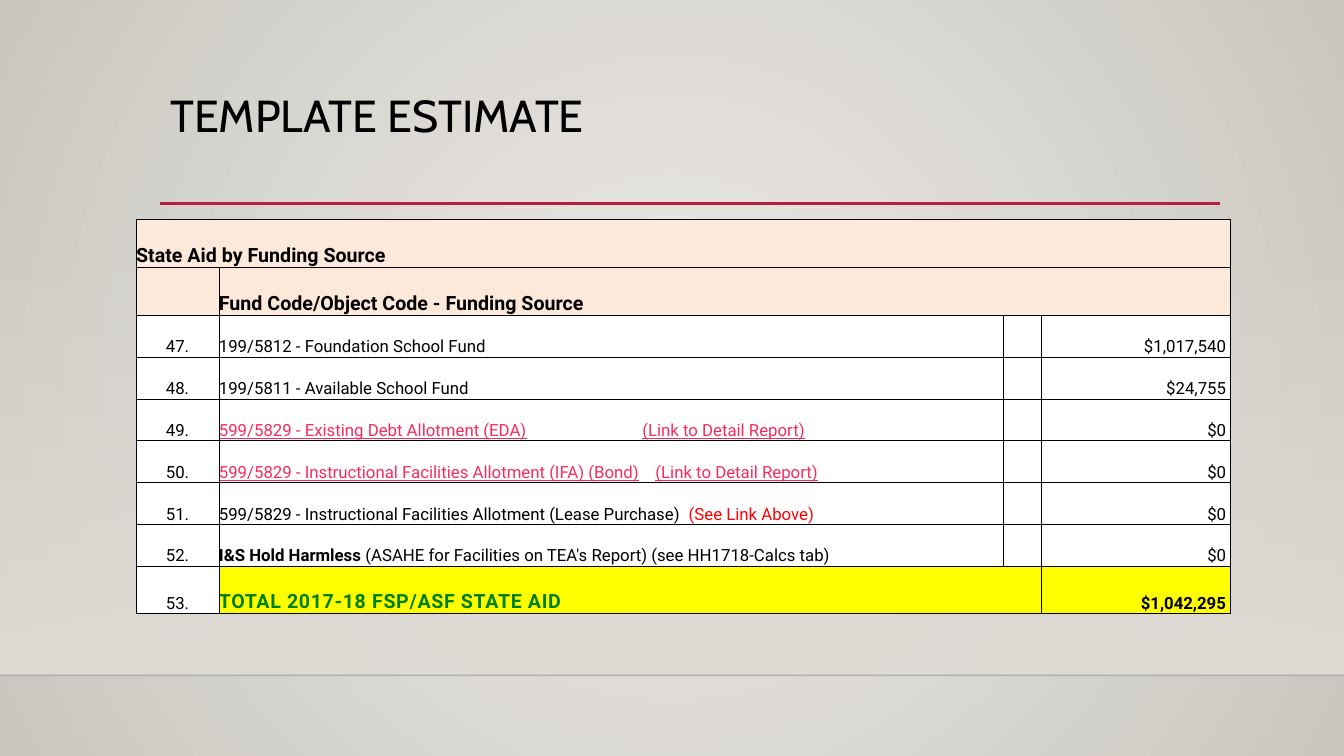
"""Build the template estimate slide with its state aid table."""
from dataclasses import dataclass

from lxml import etree
from pptx import Presentation
from pptx.dml.color import RGBColor
from pptx.enum.shapes import MSO_CONNECTOR, MSO_SHAPE
from pptx.enum.text import MSO_ANCHOR, PP_ALIGN
from pptx.oxml.ns import qn
from pptx.util import Inches, Length, Pt

STRAIGHT = MSO_CONNECTOR.STRAIGHT
RECTANGLE = MSO_SHAPE.RECTANGLE
TOP, BOTTOM = MSO_ANCHOR.TOP, MSO_ANCHOR.BOTTOM
LEFT, CENTER, RIGHT = PP_ALIGN.LEFT, PP_ALIGN.CENTER, PP_ALIGN.RIGHT

BLACK = RGBColor(0x00, 0x00, 0x00)
WHITE = RGBColor(0xFF, 0xFF, 0xFF)
GLOW = RGBColor(0xEC, 0xEA, 0xE7)
STONE = RGBColor(0xCA, 0xC7, 0xC1)
WALL = RGBColor(0xDF, 0xDB, 0xD5)
CRIMSON = RGBColor(0xB7, 0x1E, 0x42)
PEACH = RGBColor(0xFD, 0xE9, 0xD9)
YELLOW = RGBColor(0xFF, 0xFF, 0x00)
PINK = RGBColor(0xFA, 0x2B, 0x5C)
RED = RGBColor(0xFF, 0x00, 0x00)
GREEN = RGBColor(0x00, 0x80, 0x00)

SLIDE_WIDTH, SLIDE_HEIGHT = Inches(13.33), Inches(7.5)
MARGIN, RULE_END = 11.93, 90.77
FLOOR = 89.33
COLUMN_SHARES = (0.82, 7.77, 0.38, 1.87)
TALL, SHORT = 8, 7
AMOUNT_INSET = Inches(0.04)
RADIAL = '<a:path path="circle"><a:fillToRect l="50000" t="50000" r="50000" b="50000"/></a:path>'
DOWNWARD = '<a:lin ang="5400000" scaled="0"/>'
DRAWING = 'xmlns:a="http://schemas.openxmlformats.org/drawingml/2006/main"'


@dataclass(frozen=True)
class Phrase:
    """A stretch of text in one format."""
    text: str
    color: RGBColor = BLACK
    size: float = 12
    bold: bool = False
    underline: bool = False
    font: str = "Roboto"
    tracking: int = 0


@dataclass(frozen=True)
class FundRow:
    """A table row, with the column edges that carry no border."""
    number: tuple[Phrase, ...] = ()
    source: tuple[Phrase, ...] = ()
    amount: tuple[Phrase, ...] = ()
    fill: RGBColor = WHITE
    number_fill: RGBColor = WHITE
    height: int = SHORT
    open_edges: frozenset[int] = frozenset()
    tab: float = 0


def fund(number: int, *source: Phrase, amount: str = "$0", tab: float = 0) -> FundRow:
    """Describe one numbered funding source."""
    return FundRow((Phrase(f"{number}."),), source, (Phrase(amount),), tab=tab)


def link(text: str) -> Phrase:
    """Describe underlined link text."""
    return Phrase(text, PINK, underline=True)


ROWS = (
    FundRow(number=(Phrase("State Aid by Funding Source", size=14, bold=True),),
            fill=PEACH, number_fill=PEACH, height=TALL, open_edges=frozenset({1, 2, 3})),
    FundRow(source=(Phrase("Fund Code/Object Code - Funding Source", size=14, bold=True),),
            fill=PEACH, number_fill=PEACH, height=TALL, open_edges=frozenset({2, 3})),
    fund(47, Phrase("199/5812 - Foundation School Fund"), amount="$1,017,540"),
    fund(48, Phrase("199/5811 - Available School Fund"), amount="$24,755"),
    fund(49, link("599/5829 - Existing Debt Allotment (EDA)\t(Link to Detail Report)"), tab=4.2),
    fund(50, link("599/5829 - Instructional Facilities Allotment (IFA) (Bond)\t"
                  "(Link to Detail Report)"), tab=4.33),
    fund(51, Phrase("599/5829 - Instructional Facilities Allotment (Lease Purchase)\t"),
         Phrase("(See Link Above)", RED), tab=4.66),
    fund(52, Phrase("I&S Hold Harmless", bold=True),
         Phrase(" (ASAHE for Facilities on TEA's Report) (see HH1718-Calcs tab)")),
    FundRow((Phrase("53."),),
            (Phrase("TOTAL 2017-18 FSP/ASF STATE AID", GREEN, 14, True, tracking=45),),
            (Phrase("$1,042,295", bold=True),),
            fill=YELLOW, height=TALL, open_edges=frozenset({2})),
)


def across(percent: float) -> Length:
    """Return a share of the slide's width."""
    return Length(int(SLIDE_WIDTH * percent / 100))


def down(percent: float) -> Length:
    """Return a share of the slide's height."""
    return Length(int(SLIDE_HEIGHT * percent / 100))


def paint_gradient(owner, start: RGBColor, end: RGBColor, alpha: int, direction: str) -> None:
    """Replace the gradient inside an element with a two-stop one."""
    gradient = next(owner.iter(qn("a:gradFill")))
    fresh = etree.fromstring(
        f'<a:gradFill {DRAWING} rotWithShape="1"><a:gsLst>'
        f'<a:gs pos="0"><a:srgbClr val="{start}"><a:alpha val="{alpha}"/></a:srgbClr></a:gs>'
        f'<a:gs pos="100000"><a:srgbClr val="{end}"/></a:gs></a:gsLst>{direction}</a:gradFill>')
    gradient.getparent().replace(gradient, fresh)


def draw_rule(slide, start: float, end: float, level: float, color: RGBColor,
              width: float, alpha: int = 100) -> None:
    """Draw a horizontal line across part of the slide."""
    rule = slide.shapes.add_connector(
        STRAIGHT, across(start), down(level), across(end), down(level))
    rule.line.color.rgb = color
    rule.line.width = Pt(width)
    tint = next(rule._element.spPr.iter(qn("a:srgbClr")))
    etree.SubElement(tint, qn("a:alpha"), val=str(alpha * 1000))
    etree.SubElement(rule._element.spPr, qn("a:effectLst"))


def write(paragraph, phrases: tuple[Phrase, ...]) -> None:
    """Add formatted phrases to a paragraph."""
    for phrase in phrases:
        run = paragraph.add_run()
        run.text = phrase.text
        look = {"name": phrase.font, "size": Pt(phrase.size),
                "bold": phrase.bold, "underline": phrase.underline}
        for attribute, value in look.items():
            setattr(run.font, attribute, value)
        run.font.color.rgb = phrase.color
        if phrase.tracking:
            run._r.get_or_add_rPr().set("spc", str(phrase.tracking))


def border(cell, open_sides: set[str]) -> None:
    """Line the cell's sides, leaving the open ones bare."""
    properties = cell._tc.get_or_add_tcPr()
    for position, side in enumerate("LRTB"):
        paint = ("<a:noFill/>" if side in open_sides else
                 f'<a:solidFill><a:srgbClr val="{BLACK}"/></a:solidFill>')
        properties.insert(position, etree.fromstring(
            f'<a:ln{side} {DRAWING} w="{Pt(0.5)}">{paint}</a:ln{side}>'))


def draw_title(slide) -> None:
    """Write the slide title."""
    title = slide.shapes.add_textbox(across(MARGIN), down(11.73), across(78.77), down(15.33))
    title.text_frame.word_wrap = True
    title.text_frame.vertical_anchor = TOP
    paragraph = title.text_frame.paragraphs[0]
    paragraph.line_spacing = 0.9
    write(paragraph, (Phrase("TEMPLATE ESTIMATE", size=32, font="Cabin"),))


def draw_funding(slide) -> None:
    """Draw the table of state aid by funding source."""
    width, height = across(81.4), down(52.13)
    frame = slide.shapes.add_table(
        len(ROWS), len(COLUMN_SHARES), across(10.13), down(29.07), width, height)
    funding = frame.table
    funding.first_row = funding.horz_banding = False
    for column, share in zip(funding.columns, COLUMN_SHARES):
        column.width = int(width * share / sum(COLUMN_SHARES))
    total_height = sum(row.height for row in ROWS)
    for index, row in enumerate(ROWS):
        funding.rows[index].height = int(height * row.height / total_height)
        number_align = CENTER if row.source else LEFT
        contents = ((row.number, number_align), (row.source, LEFT), ((), LEFT), (row.amount, RIGHT))
        for place, (phrases, alignment) in enumerate(contents):
            cell = funding.cell(index, place)
            layout = {"margin_left": 0, "margin_top": 0, "margin_bottom": 0,
                      "margin_right": AMOUNT_INSET if alignment == RIGHT else 0,
                      "vertical_anchor": BOTTOM}
            for attribute, value in layout.items():
                setattr(cell, attribute, value)
            cell.fill.solid()
            cell.fill.fore_color.rgb = row.fill if place else row.number_fill
            border(cell, {side for side, edge in (("L", place), ("R", place + 1))
                          if edge in row.open_edges})
            paragraph = cell.text_frame.paragraphs[0]
            paragraph.alignment = alignment
            if row.tab and place == 1:
                stops = etree.SubElement(paragraph._p.get_or_add_pPr(), qn("a:tabLst"))
                etree.SubElement(stops, qn("a:tab"), pos=str(Inches(row.tab)), algn="l")
            write(paragraph, phrases)
    funding.cell(0, 0).merge(funding.cell(0, 1))


def main() -> None:
    """Assemble and save the slide."""
    deck = Presentation()
    deck.slide_width, deck.slide_height = SLIDE_WIDTH, SLIDE_HEIGHT
    slide = deck.slides.add_slide(deck.slide_layouts[6])
    slide.background.fill.gradient()
    paint_gradient(slide._element, GLOW, STONE, 100000, RADIAL)
    wall = slide.shapes.add_shape(RECTANGLE, 0, down(29.47), SLIDE_WIDTH, down(59.87))
    wall.shadow.inherit = False
    wall.line.fill.background()
    wall.fill.gradient()
    paint_gradient(wall._element, WALL, WALL, 0, DOWNWARD)
    draw_rule(slide, 0, 100, FLOOR, BLACK, 1, alpha=20)
    draw_rule(slide, MARGIN, RULE_END, 26.93, CRIMSON, 2.5)
    draw_title(slide)
    draw_funding(slide)
    deck.save("out.pptx")


if __name__ == "__main__":
    main()
